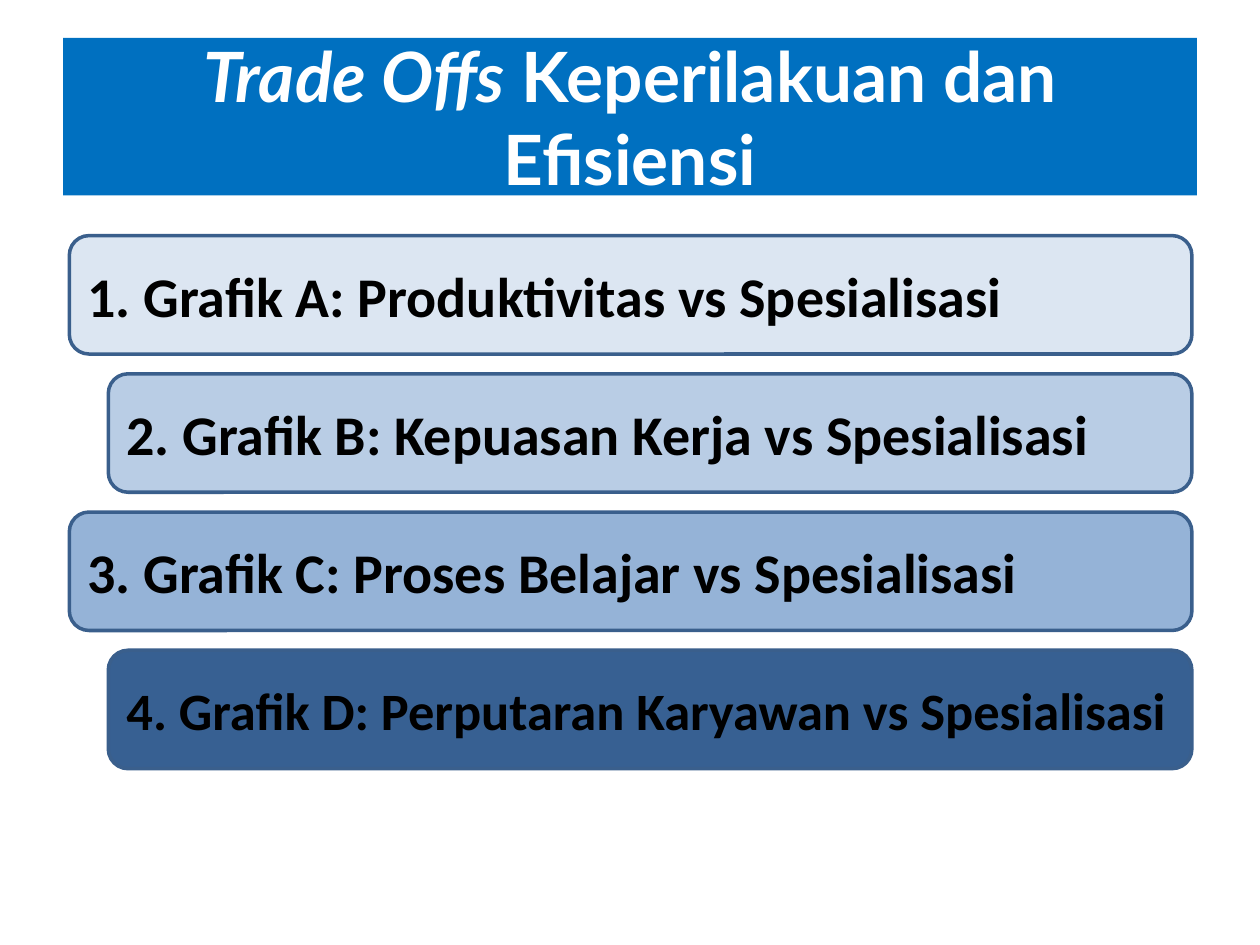
from pptx import Presentation
from pptx.dml.color import RGBColor
from pptx.enum.shapes import MSO_SHAPE
from pptx.enum.text import MSO_ANCHOR, MSO_AUTO_SIZE, PP_ALIGN
from pptx.util import Inches, Pt

RIGHT_EDGE = 9.46
FIRST_TOP = 1.87
PITCH = 1.097
BAR_HEIGHT = 0.94
LEFT_EDGES = (0.55, 0.86)

TOPICS = [
    ("1. Grafik A: Produktivitas vs Spesialisasi", "DCE6F2", 32),
    ("2. Grafik B: Kepuasan Kerja vs Spesialisasi", "B9CDE5", 32),
    ("3. Grafik C: Proses Belajar vs Spesialisasi", "95B3D7", 32),
    ("4. Grafik D: Perputaran Karyawan vs Spesialisasi", "376092", 30),
]


def paint(color_format, hex_color):
    color_format.rgb = RGBColor.from_string(hex_color)


def fill_solid(shape, hex_color):
    shape.fill.solid()
    paint(shape.fill.fore_color, hex_color)


def add_run(paragraph, text, font, size, color, italic=False):
    run = paragraph.add_run()
    run.text = text
    run.font.name = font
    run.font.size = Pt(size)
    run.font.bold = True
    run.font.italic = italic
    paint(run.font.color, color)


def set_title(slide):
    title = slide.shapes.title
    title.left, title.top = Inches(0.5), Inches(0.3)
    title.width, title.height = Inches(9), Inches(1.25)
    fill_solid(title, "0070C0")
    frame = title.text_frame
    frame.word_wrap = True
    frame.auto_size = MSO_AUTO_SIZE.NONE
    frame.vertical_anchor = MSO_ANCHOR.MIDDLE
    heading = frame.paragraphs[0]
    heading.alignment = PP_ALIGN.CENTER
    add_run(heading, "Trade Offs", "Lato", 39.6, "FFFFFF", italic=True)
    add_run(heading, " Keperilakuan dan Efisiensi", "Lato", 39.6, "FFFFFF")


def add_topic_bar(slide, index, text, fill, size):
    """Stack the bar by index, indenting every second one."""
    left = LEFT_EDGES[index % 2]
    bar = slide.shapes.add_shape(
        MSO_SHAPE.ROUNDED_RECTANGLE,
        Inches(left), Inches(FIRST_TOP + index * PITCH),
        Inches(RIGHT_EDGE - left), Inches(BAR_HEIGHT))
    bar.shadow.inherit = False
    fill_solid(bar, fill)
    paint(bar.line.color, "3A5F8C")
    bar.line.width = Pt(2)
    frame = bar.text_frame
    frame.word_wrap = True
    frame.vertical_anchor = MSO_ANCHOR.MIDDLE
    topic = frame.paragraphs[0]
    topic.alignment = PP_ALIGN.LEFT
    add_run(topic, text, "Calibri", size, "000000")


def main():
    deck = Presentation()
    deck.slide_width, deck.slide_height = Inches(10), Inches(7.5)
    slide = deck.slides.add_slide(deck.slide_layouts[5])
    set_title(slide)
    for index, (text, fill, size) in enumerate(TOPICS):
        add_topic_bar(slide, index, text, fill, size)
    deck.save("out.pptx")


if __name__ == "__main__":
    main()
